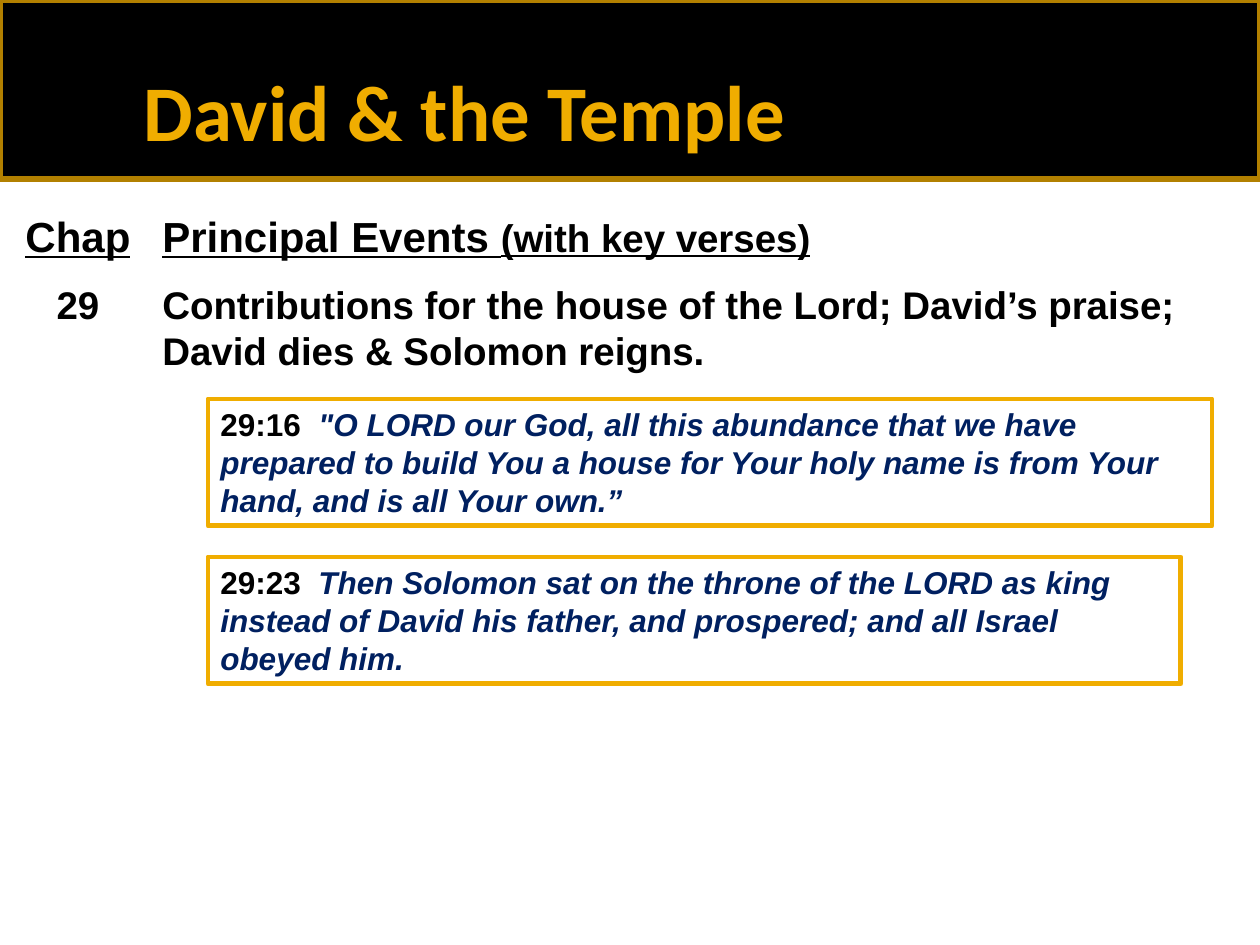
from dataclasses import dataclass

from pptx import Presentation
from pptx.dml.color import RGBColor
from pptx.enum.shapes import MSO_SHAPE
from pptx.enum.text import MSO_ANCHOR, MSO_AUTO_SIZE, PP_ALIGN
from pptx.util import Emu, Pt

RECT = MSO_SHAPE.RECTANGLE
LEFT, CENTER = PP_ALIGN.LEFT, PP_ALIGN.CENTER
TOP, MIDDLE = MSO_ANCHOR.TOP, MSO_ANCHOR.MIDDLE
FIXED = MSO_AUTO_SIZE.NONE

COLORS = {
    "black": "000000",
    "gold": "F0AD00",
    "bronze": "B28000",
    "navy": "002060",
}
HEAD, BODY, VERSE = 24, 22, 18
GAP = 11.5  # points between heading and entry


@dataclass
class Box:
    left: int
    top: int
    width: int
    height: int


@dataclass
class Column:
    box: Box
    head: str
    note: str
    entry: str
    align: PP_ALIGN


@dataclass
class Quote:
    box: Box
    ref: str
    words: str


COLUMNS = [
    Column(Box(6, 204, 144, 537), "Chap", "", "29", CENTER),
    Column(Box(150, 204, 1094, 494), "Principal Events ", "(with key verses)",
           "Contributions for the house of the Lord; David’s praise; "
           "David dies & Solomon reigns.", LEFT),
]
QUOTES = [
    Quote(Box(208, 399, 1004, 127), "29:16  ",
          '"O LORD our God, all this abundance that we have prepared to build '
          "You a house for Your holy name is from Your hand, and is all Your own.”"),
    Quote(Box(208, 557, 973, 127), "29:23  ",
          "Then Solomon sat on the throne of the LORD as king instead of David "
          "his father, and prospered; and all Israel obeyed him."),
]


def px(n: int) -> Emu:
    return Emu(round(n * 914400 / 126))


def rgb(name: str) -> RGBColor:
    return RGBColor.from_string(COLORS[name])


def area(box: Box) -> tuple:
    return px(box.left), px(box.top), px(box.width), px(box.height)


def style(font, size: int, color: str = "black", name: str = "Arial") -> None:
    font.name, font.size, font.bold = name, Pt(size), True
    font.color.rgb = rgb(color)


def setup(frame, anchor: MSO_ANCHOR = TOP) -> None:
    frame.word_wrap = True
    frame.auto_size = FIXED
    frame.vertical_anchor = anchor


def add_rect(slide, box: Box, line: str, weight: float):
    shape = slide.shapes.add_shape(RECT, *area(box))
    shape.shadow.inherit = False
    shape.fill.background()
    shape.line.color.rgb = rgb(line)
    shape.line.width = Pt(weight)
    return shape


def add_title(slide, box: Box, text: str) -> None:
    title = slide.shapes.title
    title.left, title.top, title.width, title.height = area(box)
    title.text = text
    setup(title.text_frame, MIDDLE)
    para = title.text_frame.paragraphs[0]
    para.alignment = LEFT
    style(para.font, 45, "gold", "Calibri")


def add_column(slide, col: Column) -> None:
    frame = slide.shapes.add_textbox(*area(col.box)).text_frame
    setup(frame)
    head = frame.paragraphs[0]
    head.alignment = col.align
    style(head.font, HEAD)
    head.font.underline = True
    head.add_run().text = col.head
    if col.note:
        note = head.add_run()
        note.text = col.note
        note.font.size = Pt(BODY)
    entry = frame.add_paragraph()
    entry.text = col.entry
    entry.alignment = col.align
    entry.space_before = Pt(GAP)
    style(entry.font, BODY)


def add_quote(slide, quote: Quote) -> None:
    frame = add_rect(slide, quote.box, "gold", 2.75).text_frame
    setup(frame)
    para = frame.paragraphs[0]
    para.alignment = LEFT
    style(para.font, VERSE)
    para.add_run().text = quote.ref
    words = para.add_run()
    words.text = quote.words
    words.font.italic = True
    words.font.color.rgb = rgb("navy")


def main() -> None:
    deck = Presentation()
    deck.slide_width, deck.slide_height = px(1260), px(945)
    slide = deck.slides.add_slide(deck.slide_layouts[5])

    # Header band, moved behind the title
    band = add_rect(slide, Box(0, 0, 1260, 179), "bronze", 3.78)
    band.fill.solid()
    band.fill.fore_color.rgb = rgb("black")
    slide.shapes.title.element.addprevious(band.element)
    add_title(slide, Box(131, 57, 786, 107), "David & the Temple")

    # Chapter and events columns
    for col in COLUMNS:
        add_column(slide, col)

    # Key verses
    for quote in QUOTES:
        add_quote(slide, quote)

    deck.save("out.pptx")


if __name__ == "__main__":
    main()
